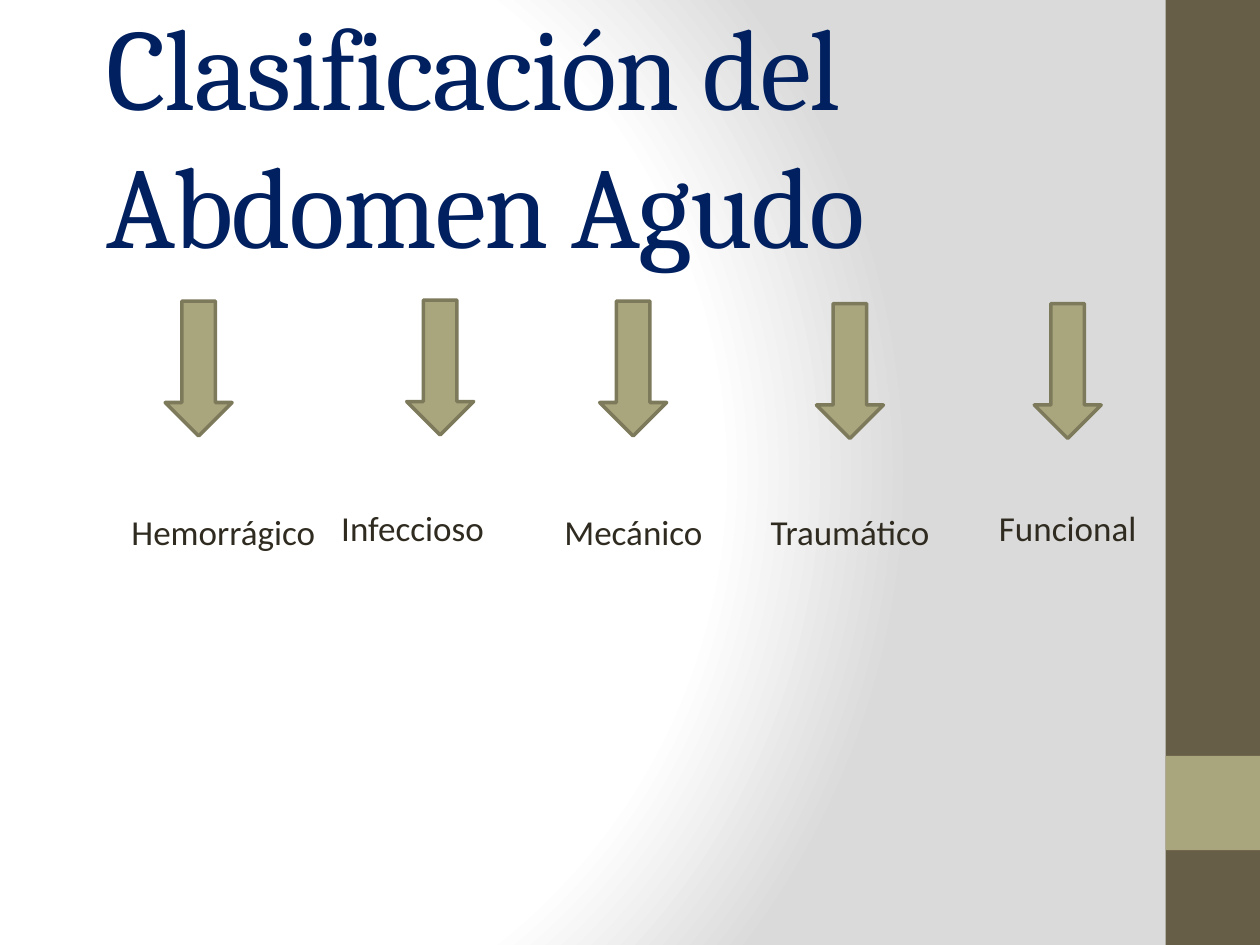
from dataclasses import dataclass

from pptx import Presentation
from pptx.dml.color import RGBColor
from pptx.enum.shapes import MSO_SHAPE
from pptx.enum.text import MSO_ANCHOR, PP_ALIGN
from pptx.oxml import parse_xml
from pptx.oxml.ns import nsdecls
from pptx.util import Cm, Pt

COLORS = {
    "title": "002060",
    "text": "2F2B20",
    "bar": "675E47",
    "accent": "A9A57C",
    "outline": "7D7A5C",
    "center": "FFFFFF",
    "edge": "DADADA",
}
TITLE_FORMAT = {"name": "Cambria", "size": Pt(66)}
LABEL_FORMAT = {"name": "Calibri", "size": Pt(20)}
ARROW_WIDTH, ARROW_HEIGHT = 1.35, 2.72
LABEL_HEIGHT = 1.8


@dataclass
class Category:
    """A kind of acute abdomen: an arrow above its label (cm)."""
    name: str
    arrow_left: float
    arrow_top: float
    label_left: float
    label_top: float
    label_width: float = 4.39
    align: PP_ALIGN = PP_ALIGN.CENTER


CATEGORIES = [
    Category("Hemorrágico", 3.33, 6.07, 2.31, 10.16),
    Category("Infeccioso", 8.2, 6.05, 6.63, 10.08, align=PP_ALIGN.LEFT),
    Category("Mecánico", 12.09, 6.07, 10.85, 10.16, label_width=3.84),
    Category("Traumático", 16.46, 6.12, 14.94, 10.16),
    Category("Funcional", 20.85, 6.12, 19.33, 10.08),
]


def color(key: str) -> RGBColor:
    return RGBColor.from_string(COLORS[key])


def set_background(page) -> None:
    stops = [(0, "center"), (75, "center"), (100, "edge")]
    stop_xml = "".join(
        f'<a:gs pos="{position * 1000}"><a:srgbClr val="{COLORS[key]}"/></a:gs>'
        for position, key in stops
    )
    background = parse_xml(
        f'<p:bg {nsdecls("p", "a")}><p:bgPr><a:gradFill rotWithShape="1">'
        f'<a:gsLst>{stop_xml}</a:gsLst><a:path path="circle">'
        '<a:fillToRect l="20000" t="50000" r="100000" b="50000"/></a:path>'
        '</a:gradFill><a:effectLst/></p:bgPr></p:bg>'
    )
    page._element.cSld.insert(0, background)


def add_block(page, kind: MSO_SHAPE, left: float, top: float,
              width: float, height: float, fill: str):
    block = page.shapes.add_shape(kind, Cm(left), Cm(top), Cm(width), Cm(height))
    block.shadow.inherit = False
    block.fill.solid()
    block.fill.fore_color.rgb = color(fill)
    block.line.fill.background()
    return block


def add_text(page, text: str, left: float, top: float, width: float,
             height: float, font_format: dict, font_color: str):
    box = page.shapes.add_textbox(Cm(left), Cm(top), Cm(width), Cm(height))
    box.text_frame.word_wrap = True
    paragraph = box.text_frame.paragraphs[0]
    span = paragraph.add_run()
    span.text = text
    for attribute, value in font_format.items():
        setattr(span.font, attribute, value)
    span.font.color.rgb = color(font_color)
    return box


def add_title(page) -> None:
    box = add_text(page, "Clasificación del Abdomen Agudo",
                   1.9, 1.52, 23.01, 4.09, TITLE_FORMAT, "title")
    box.text_frame.vertical_anchor = MSO_ANCHOR.BOTTOM
    span = box.text_frame.paragraphs[0].runs[0]
    span.font._element.set("spc", "-100")


def add_category(page, category: Category) -> None:
    arrow = add_block(page, MSO_SHAPE.DOWN_ARROW, category.arrow_left,
                      category.arrow_top, ARROW_WIDTH, ARROW_HEIGHT, "accent")
    arrow.line.color.rgb = color("outline")
    arrow.line.width = Pt(2)
    label = add_text(page, category.name, category.label_left, category.label_top,
                     category.label_width, LABEL_HEIGHT, LABEL_FORMAT, "text")
    paragraph = label.text_frame.paragraphs[0]
    paragraph.alignment = category.align
    paragraph.space_before = Pt(4)


def main() -> None:
    deck = Presentation()
    deck.slide_width, deck.slide_height = Cm(25.4), Cm(19.05)
    page = deck.slides.add_slide(deck.slide_layouts[6])
    set_background(page)

    # Side bar with its accent square
    add_block(page, MSO_SHAPE.RECTANGLE, 23.5, 0, 1.9, 19.05, "bar")
    add_block(page, MSO_SHAPE.RECTANGLE, 23.5, 15.24, 1.9, 1.9, "accent")

    # Title and categories
    add_title(page)
    for category in CATEGORIES:
        add_category(page, category)

    deck.save("out.pptx")


if __name__ == "__main__":
    main()
